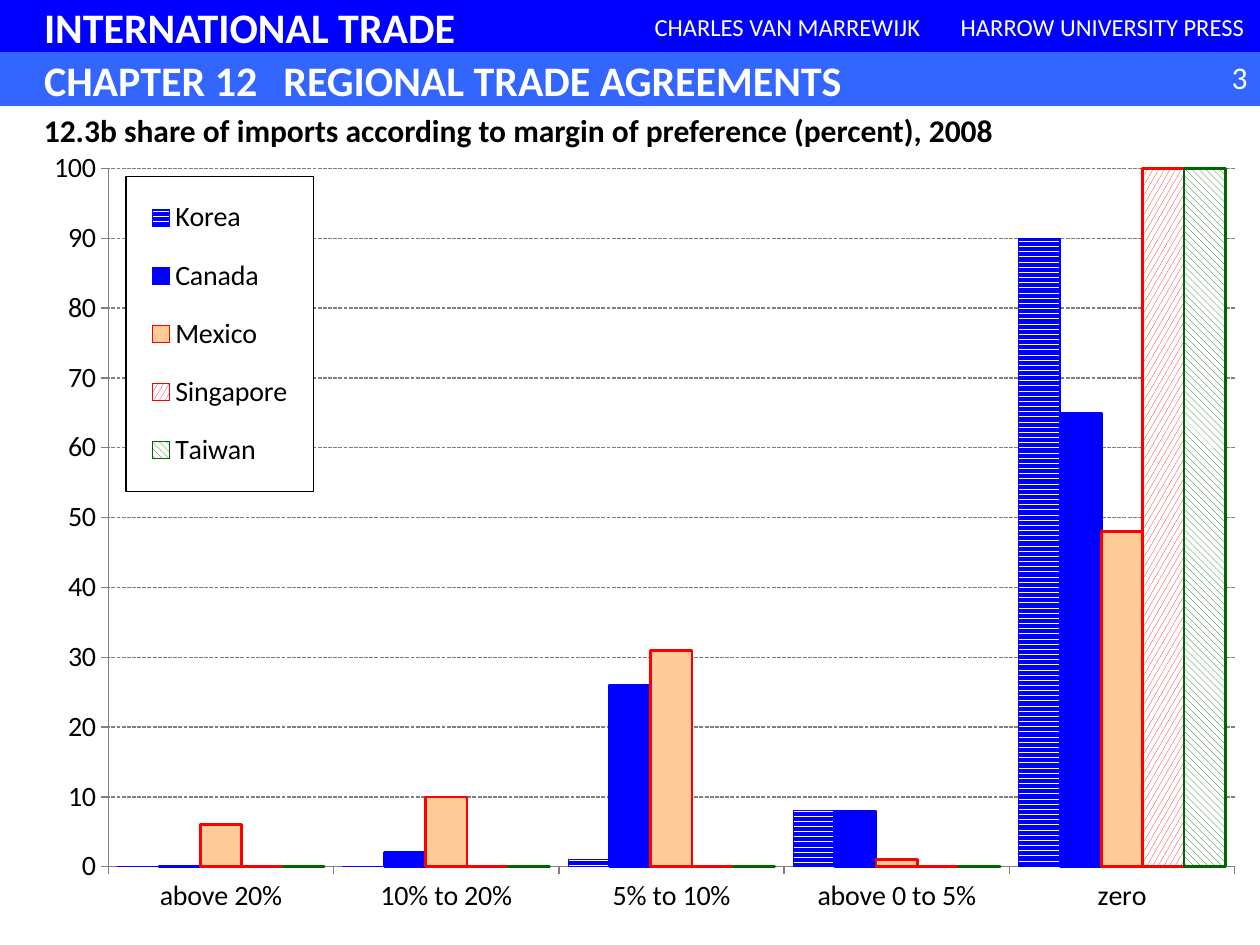
from lxml import etree
from pptx import Presentation
from pptx.chart.data import CategoryChartData
from pptx.dml.color import RGBColor
from pptx.enum.chart import XL_CHART_TYPE, XL_LEGEND_POSITION, XL_TICK_MARK
from pptx.enum.dml import MSO_LINE, MSO_PATTERN
from pptx.enum.shapes import MSO_SHAPE
from pptx.enum.text import MSO_ANCHOR, PP_ALIGN
from pptx.oxml import parse_xml
from pptx.oxml.ns import nsdecls, qn
from pptx.util import Inches, Pt

RECTANGLE = MSO_SHAPE.RECTANGLE
LEFT, CENTER, RIGHT = PP_ALIGN.LEFT, PP_ALIGN.CENTER, PP_ALIGN.RIGHT
MIDDLE = MSO_ANCHOR.MIDDLE
OUTSIDE, NO_TICK = XL_TICK_MARK.OUTSIDE, XL_TICK_MARK.NONE
STRIPES = MSO_PATTERN.DARK_HORIZONTAL
CONFETTI = MSO_PATTERN.LARGE_CONFETTI
DIAGONALS = MSO_PATTERN.WIDE_DOWNWARD_DIAGONAL

BLACK = RGBColor(0, 0, 0)
WHITE = RGBColor(255, 255, 255)
GRAY = RGBColor(128, 128, 128)
BLUE = RGBColor(0, 0, 255)
LIGHT_BLUE = RGBColor(0x33, 0x66, 0xFF)
PEACH = RGBColor(0xFF, 0xCC, 0x99)
RED = RGBColor(255, 0, 0)
GREEN = RGBColor(0, 0x66, 0)

FONT = "Calibri"
WIDTH, HEIGHT = 10, 7.5
BAND = 0.42            # height of a header band
INDENT = 0.35          # left edge of the header titles
CHART_TOP = 0.83

CATEGORIES = ["above 20%", "10% to 20%", "5% to 10%", "above 0 to 5%", "zero"]
# name, values, fill colour, pattern, outline colour, outline width
SERIES = [
    ("Korea", (0, 0, 1, 8, 90), BLUE, STRIPES, BLUE, 0.75),
    ("Canada", (0, 2, 26, 8, 65), BLUE, None, BLUE, 1.5),
    ("Mexico", (6, 10, 31, 1, 48), PEACH, None, RED, 1.5),
    ("Singapore", (0, 0, 0, 0, 100), RED, CONFETTI, RED, 1.5),
    ("Taiwan", (0, 0, 0, 0, 100), GREEN, DIAGONALS, GREEN, 1.5),
]


def set_text(box, text, size, color, bold=False, align=LEFT):
    frame = box.text_frame
    frame.text = text
    para = frame.paragraphs[0]
    para.alignment = align
    for span in para.runs:
        span.font.name = FONT
        span.font.size = Pt(size)
        span.font.bold = bold
        span.font.color.rgb = color
    return para


def add_band(page, left, top, width, color, text, size, **style):
    box = page.shapes.add_shape(RECTANGLE, Inches(left), Inches(top),
                                Inches(width), Inches(BAND))
    box.shadow.inherit = False
    box.fill.solid()
    box.fill.fore_color.rgb = color
    box.line.color.rgb = color
    box.line.width = Pt(0.75)
    box.text_frame.vertical_anchor = MIDDLE
    box.text_frame.word_wrap = True
    para = set_text(box, text, size, WHITE, **style)
    return box, para


def add_title_band(page, top, color, text):
    box, para = add_band(page, 0, top, WIDTH, color, text, 24, bold=True)
    box.text_frame.margin_left = Inches(INDENT)
    # Tab stop between the chapter number and its title
    stops = etree.SubElement(para._p.get_or_add_pPr(), qn("a:tabLst"))
    etree.SubElement(stops, qn("a:tab"), pos=str(Inches(1.9)), algn="l")


def add_label(page, left, top, width, text, color, **style):
    box = page.shapes.add_textbox(Inches(left), Inches(top),
                                  Inches(width), Inches(0.4))
    box.text_frame.word_wrap = True
    set_text(box, text, 18, color, **style)


def make_layout(x, y, w, h, inner=False):
    target = '<c:layoutTarget val="inner"/>' if inner else ""
    return parse_xml(
        f'<c:layout {nsdecls("c")}><c:manualLayout>{target}'
        '<c:xMode val="edge"/><c:yMode val="edge"/>'
        f'<c:x val="{x}"/><c:y val="{y}"/><c:w val="{w}"/><c:h val="{h}"/>'
        '</c:manualLayout></c:layout>')


def place(element, index, layout):
    for old in element.findall(qn("c:layout")):
        element.remove(old)
    element.insert(index, layout)


def style_axis(axis):
    axis.major_tick_mark = OUTSIDE
    axis.minor_tick_mark = NO_TICK
    axis.tick_labels.font.size = Pt(16)
    axis.format.line.color.rgb = GRAY
    axis.format.line.width = Pt(0.75)


def style_series(series, color, pattern, outline, width):
    fill = series.format.fill
    if pattern is None:
        fill.solid()
    else:
        fill.patterned()
        fill.pattern = pattern
        fill.back_color.rgb = WHITE
    fill.fore_color.rgb = color
    series.format.line.color.rgb = outline
    series.format.line.width = Pt(width)
    series.invert_if_negative = False


def style_legend(chart):
    chart.has_legend = True
    legend = chart.legend
    legend.position = XL_LEGEND_POSITION.LEFT
    legend.include_in_layout = False
    legend.font.size = Pt(16)
    element = legend._element
    place(element, 1, make_layout(0.1, 0.086, 0.149, 0.374))
    element.find(qn("c:overlay")).addnext(parse_xml(
        f'<c:spPr {nsdecls("c", "a")}>'
        f'<a:solidFill><a:srgbClr val="{WHITE}"/></a:solidFill>'
        f'<a:ln w="{Pt(0.75)}"><a:solidFill><a:srgbClr val="{BLACK}"/>'
        '</a:solidFill></a:ln></c:spPr>'))


def add_share_chart(page):
    data = CategoryChartData()
    data.categories = CATEGORIES
    for name, values, *_ in SERIES:
        data.add_series(name, values)
    chart = page.shapes.add_chart(
        XL_CHART_TYPE.COLUMN_CLUSTERED, 0, Inches(CHART_TOP), Inches(WIDTH),
        Inches(HEIGHT - CHART_TOP), data).chart
    chart.has_title = False
    chart.font.name = FONT
    chart.font.size = Pt(10)
    chart.font.color.rgb = BLACK

    plot = chart.plots[0]
    plot.gap_width = 45
    plot.overlap = 0
    plot.vary_by_categories = False
    for series, (_, _, *style) in zip(plot.series, SERIES):
        style_series(series, *style)

    style_axis(chart.category_axis)
    axis = chart.value_axis
    style_axis(axis)
    axis.minimum_scale, axis.maximum_scale, axis.major_unit = 0, 100, 10
    axis.has_major_gridlines = True
    grid = axis.major_gridlines.format.line
    grid.color.rgb = GRAY
    grid.width = Pt(0.75)
    grid.dash_style = MSO_LINE.SQUARE_DOT

    plot_area = chart._chartSpace.chart.plotArea
    place(plot_area, 0, make_layout(0.086, 0.076, 0.894, 0.831, inner=True))
    style_legend(chart)


def main():
    deck = Presentation()
    deck.slide_width, deck.slide_height = Inches(WIDTH), Inches(HEIGHT)
    page = deck.slides.add_slide(deck.slide_layouts[6])

    # Header bands
    add_title_band(page, 0, BLUE, "INTERNATIONAL TRADE")
    credits = ["CHARLES VAN MARREWIJK", "HARROW UNIVERSITY PRESS"]
    for column, credit in enumerate(credits, start=2):
        add_band(page, column * WIDTH / 4, 0, WIDTH / 4, BLUE, credit, 14,
                 align=CENTER)
    add_title_band(page, BAND, LIGHT_BLUE,
                   "CHAPTER 12\tREGIONAL TRADE AGREEMENTS")
    add_label(page, 9.33, 0.41, 0.67, "3", WHITE, align=RIGHT)

    # Chart and its heading
    add_share_chart(page)
    add_label(page, 0.25, CHART_TOP, 8.33,
              "12.3b share of imports according to margin of preference "
              "(percent), 2008", BLACK, bold=True)

    deck.save("out.pptx")


if __name__ == "__main__":
    main()
